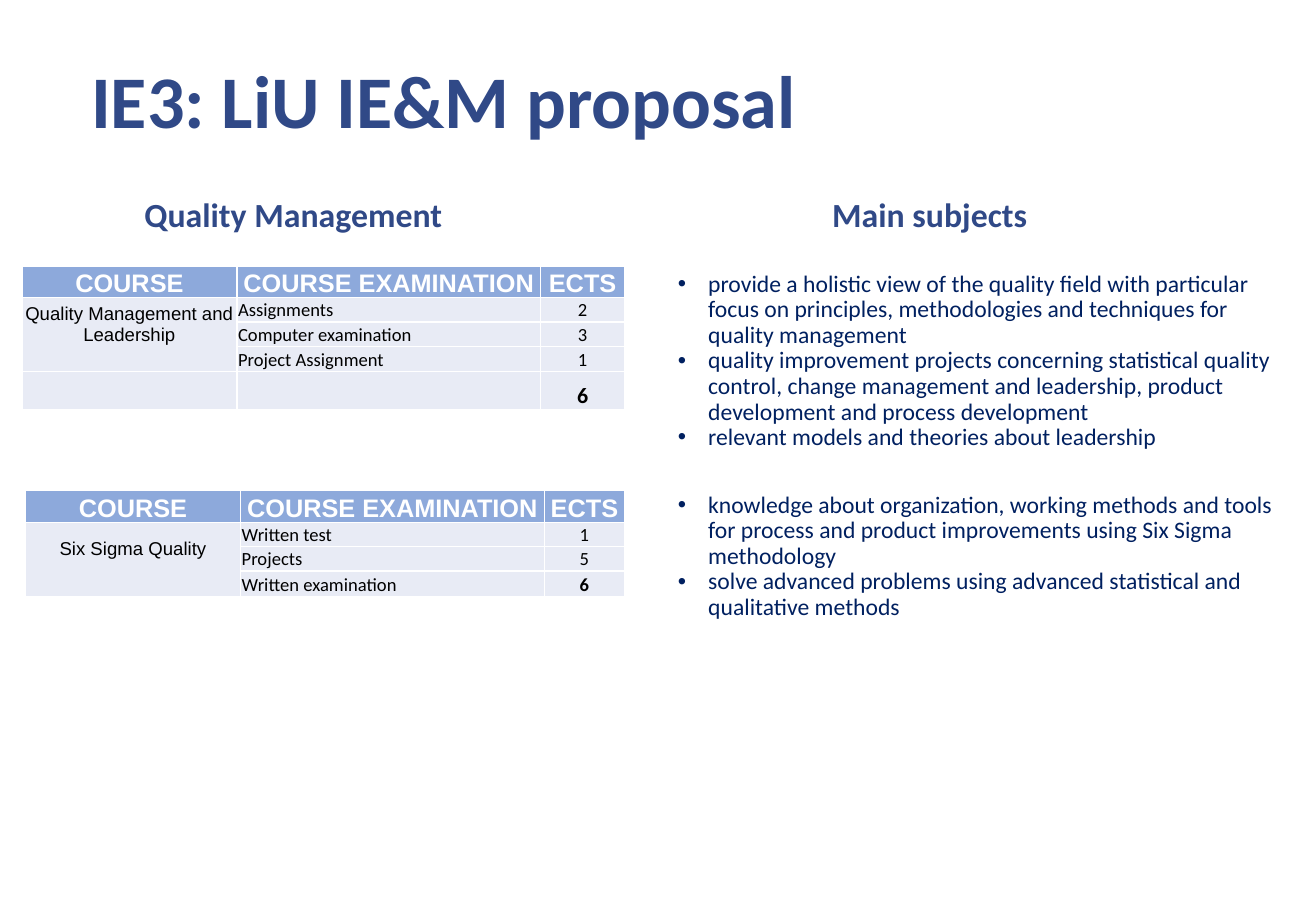
from dataclasses import dataclass
from lxml.etree import SubElement
from pptx import Presentation
from pptx.dml.color import RGBColor as RGB
from pptx.enum.text import MSO_ANCHOR as Anchor, PP_ALIGN as Align
from pptx.oxml import parse_xml
from pptx.oxml.ns import nsdecls, qn
from pptx.util import Inches, Pt


@dataclass(frozen=True)
class Theme:
    head: str = "304987"
    body: str = "002060"
    cell: str = "000000"
    white: str = "FFFFFF"
    band: str = "8DA9DB"
    pale: str = "E8EBF5"
    sans: str = "Calibri"
    arial: str = "Arial"
    title: int = 44
    label: int = 20
    list: int = 14
    top: int = 15
    total: int = 13
    small: int = 11


THEME = Theme()
HEADS = ["COURSE", "COURSE EXAMINATION", "ECTS"]
QUALITY = [("Assignments", "2"), ("Computer examination", "3"),
           ("Project Assignment", "1")]
SIGMA = [("Written test", "1"), ("Projects", "5"), ("Written examination", "6")]
SUBJECTS = [
    ["provide a holistic view of the quality field with particular focus on "
     "principles, methodologies and techniques for quality management",
     "quality improvement projects concerning statistical quality control, change "
     "management and leadership, product development and process development",
     "relevant models and theories about leadership"],
    ["knowledge about organization, working methods and tools for process and "
     "product improvements using Six Sigma methodology",
     "solve advanced problems using advanced statistical and qualitative methods"],
]


def add_run(para, text, size, color, bold=False, face=THEME.sans):
    run = para.add_run()
    run.text = text
    font = run.font
    font.name, font.size, font.bold = face, Pt(size), bold
    font.color.rgb = RGB.from_string(color)


def set_title(slide, text):
    title = slide.shapes.title
    title.left, title.top = Inches(0.53), Inches(0.34)
    title.width, title.height = Inches(9.34), Inches(1.04)
    frame = title.text_frame
    frame.vertical_anchor = Anchor.MIDDLE
    frame.margin_left, frame.margin_right = Inches(0.22), Inches(0.08)
    frame.margin_top = frame.margin_bottom = Inches(0.04)
    para = frame.paragraphs[0]
    para.alignment, para.line_spacing = Align.LEFT, 0.9
    add_run(para, text, THEME.title, THEME.head, True)


def add_box(slide, left, top, width, height):
    box = slide.shapes.add_textbox(Inches(left), Inches(top),
                                   Inches(width), Inches(height))
    box.text_frame.word_wrap = True
    return box.text_frame


def add_label(slide, left, width, text):
    frame = add_box(slide, left, 1.55, width, 0.44)
    add_run(frame.paragraphs[0], text, THEME.label, THEME.head, True)


def add_bullet(para):
    props = para._p.get_or_add_pPr()
    props.set("marL", str(Inches(0.25)))
    props.set("indent", str(-Inches(0.25)))
    color = SubElement(props, qn("a:buClr"))
    SubElement(color, qn("a:srgbClr"), val=THEME.body)
    SubElement(props, qn("a:buFont"), typeface=THEME.arial)
    SubElement(props, qn("a:buChar"), char="•")


def add_list(slide, groups):
    frame = add_box(slide, 5.48, 2.19, 5.17, 4.76)
    for g, group in enumerate(groups):
        for i, text in enumerate(group):
            first = g == i == 0
            para = frame.paragraphs[0] if first else frame.add_paragraph()
            add_bullet(para)
            para.line_spacing = 0.9
            para.space_before = Pt(25 if g and i == 0 else 0)
            add_run(para, text, THEME.list, THEME.body)


def style_cell(cell, fill):
    cell.fill.solid()
    cell.fill.fore_color.rgb = RGB.from_string(fill)
    cell.margin_left = cell.margin_right = cell.margin_top = Inches(0.01)
    cell.margin_bottom = 0
    cell.vertical_anchor = Anchor.BOTTOM
    props = cell._tc.get_or_add_tcPr()
    for i, side in enumerate("LRTB"):
        props.insert(i, parse_xml(
            f'<a:ln{side} {nsdecls("a")} w="{Pt(1)}"><a:solidFill>'
            f'<a:srgbClr val="{THEME.white}"/></a:solidFill></a:ln{side}>'))


def write_cell(cell, text, size=THEME.small, color=THEME.cell, bold=False,
               face=THEME.sans, align=Align.CENTER):
    para = cell.text_frame.paragraphs[0]
    para.alignment = align
    add_run(para, text, size, color, bold, face)


def add_course(slide, left, top, widths, heights, course, exams):
    """Add a table with a heading row and one merged course name."""
    shape = slide.shapes.add_table(len(heights), len(widths), Inches(left),
                                   Inches(top), Inches(sum(widths)),
                                   Inches(sum(heights)))
    table = shape.table
    table.first_row = table.horz_banding = False
    for col, width in zip(table.columns, widths):
        col.width = Inches(width)
    for r, (row, height) in enumerate(zip(table.rows, heights)):
        row.height = Inches(height)
        for cell in row.cells:
            style_cell(cell, THEME.pale if r else THEME.band)
    for c, text in enumerate(HEADS):
        write_cell(table.cell(0, c), text, THEME.top, THEME.white, True, THEME.arial)
    name = table.cell(1, 0)
    name.merge(table.cell(len(exams), 0))
    name.vertical_anchor = Anchor.MIDDLE
    name.margin_bottom = Inches(0.18)
    write_cell(name, course, face=THEME.arial)
    for r, (exam, ects) in enumerate(exams, 1):
        write_cell(table.cell(r, 1), exam, align=Align.LEFT)
        write_cell(table.cell(r, 2), ects, bold=ects == "6")
    return table


def main():
    deck = Presentation()
    deck.slide_width, deck.slide_height = Inches(10.83), Inches(7.5)
    slide = deck.slides.add_slide(deck.slide_layouts[5])
    set_title(slide, "IE3: LiU IE&M proposal")
    add_list(slide, SUBJECTS)
    add_label(slide, 1.09, 3.61, "Quality Management")
    rows = [0.26, 0.2, 0.2, 0.21]
    table = add_course(slide, 0.18, 2.19, [1.77, 2.5, 0.69], rows + [0.3],
                       "Quality Management and Leadership", QUALITY)
    write_cell(table.cell(4, 2), "6", THEME.total, bold=True)
    add_course(slide, 0.21, 4.04, [1.77, 2.5, 0.66], rows,
               "Six Sigma Quality", SIGMA)
    add_label(slide, 6.75, 2.08, "Main subjects")
    deck.save("out.pptx")


if __name__ == "__main__":
    main()
